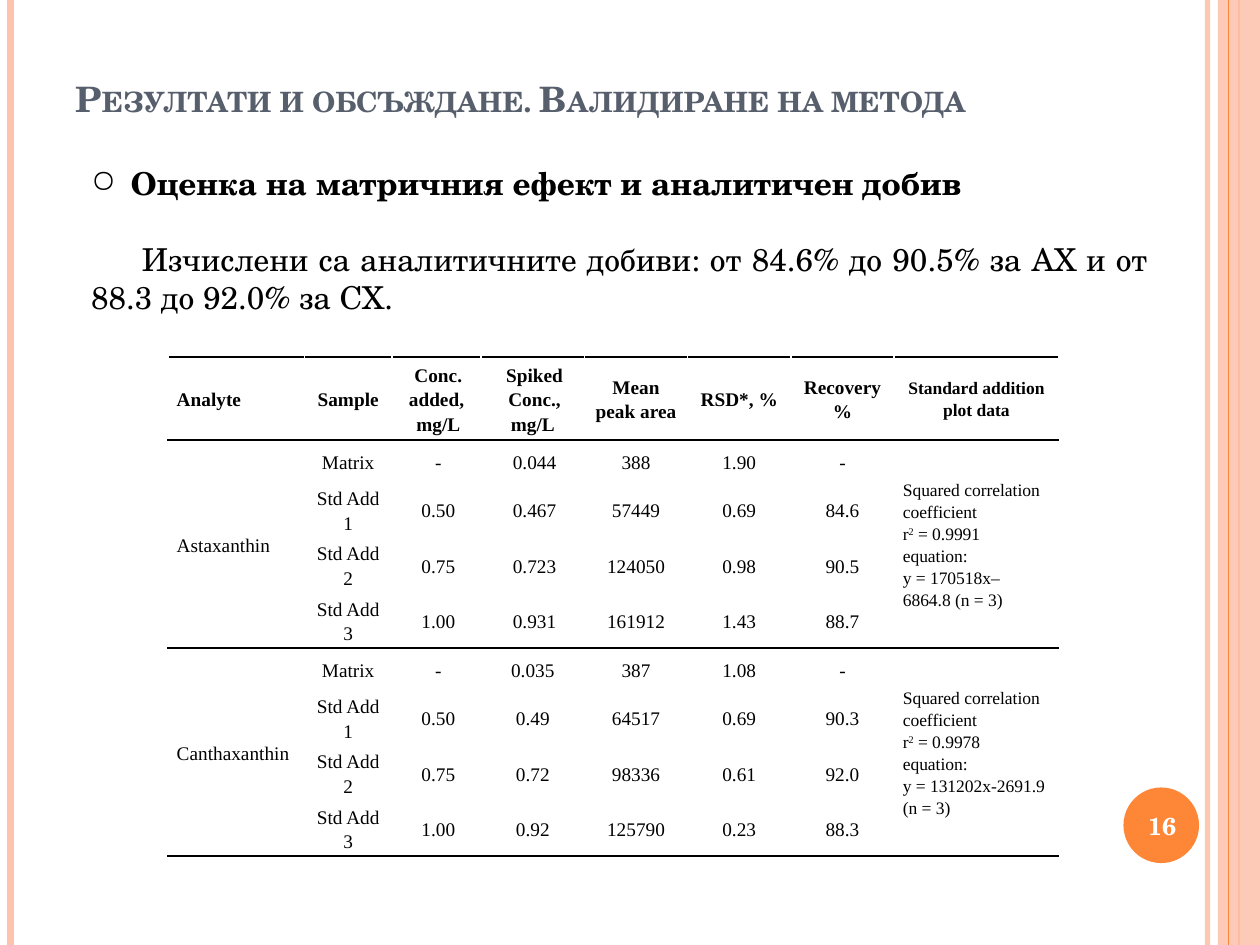
import pptx
import pptx.dml.color
import pptx.enum.shapes
import pptx.enum.text
import pptx.oxml
import pptx.oxml.ns
import pptx.util
from lxml import etree

Pt = pptx.util.Pt
ALIGN = pptx.enum.text.PP_ALIGN
ANCHOR = pptx.enum.text.MSO_ANCHOR
SHAPE = pptx.enum.shapes.MSO_SHAPE
qn = pptx.oxml.ns.qn

SERIF, TIMES = "TeX Gyre Schola", "Times New Roman"
ORANGE, PEACH, SLATE, BLACK, WHITE = "FE8637", "FEC3AE", "575F6D", "000000", "FFFFFF"
COLS = [78, 50, 51, 59, 59, 59, 59, 94]
HEADER = ["Analytе", "Sample", "Conc. added,\nmg/L", "Spiked\nConc., mg/L",
          "Mean peak area", "RSD*, %", "Recovery\n%", "Standard addition plot data"]
SAMPLES = ["Matrix", "Std Add 1", "Std Add 2", "Std Add 3"]
ADDED = ["-", "0.50", "0.75", "1.00"]
NOTE = "Squared correlation coefficient\nr^2^ = {}\nequation:\n{} (n = 3)"
ANALYTES = [
    ("Astaxanthin", NOTE.format("0.9991", "y = 170518x– 6864.8"),
     [("0.044", "388", "1.90", "-"), ("0.467", "57449", "0.69", "84.6"),
      ("0.723", "124050", "0.98", "90.5"), ("0.931", "161912", "1.43", "88.7")]),
    ("Canthaxanthin", NOTE.format("0.9978", "y = 131202x-2691.9"),
     [("0.035", "387", "1.08", "-"), ("0.49", "64517", "0.69", "90.3"),
      ("0.72", "98336", "0.61", "92.0"), ("0.92", "125790", "0.23", "88.3")]),
]


def rgb(color):
    """Return a colour from a hex string."""
    return pptx.dml.color.RGBColor.from_string(color)


def add_run(p, text, color=BLACK, **font):
    """Add a run with the given font values."""
    r = p.add_run()
    r.text = text
    r.font.color.rgb = rgb(color)
    for name, value in font.items():
        setattr(r.font, name, value)
    return r


def set_alpha(fill, percent):
    """Make the solid colour under an element partly transparent."""
    color = next(fill.iter(qn("a:srgbClr")))
    etree.SubElement(color, qn("a:alpha")).set("val", str(percent * 1000))


def add_box(s, x, y, w, h, anchor):
    """Add a wrapping text box and return its text frame."""
    tf = s.shapes.add_textbox(Pt(x), Pt(y), Pt(w), Pt(h)).text_frame
    tf.word_wrap, tf.vertical_anchor = True, anchor
    return tf


def add_rule(s, x, height, color, width, alpha=100):
    """Add a full-height vertical line."""
    line = s.shapes.add_connector(pptx.enum.shapes.MSO_CONNECTOR.STRAIGHT,
                                  Pt(x), 0, Pt(x), Pt(height))
    line.line.color.rgb = rgb(color)
    line.line.width = Pt(width)
    if alpha < 100:
        set_alpha(line.line._get_or_add_ln(), alpha)
    etree.SubElement(line._element.spPr, qn("a:effectLst"))


def add_plain(s, kind, x, y, w, h, color):
    """Add a filled shape without line or shadow."""
    sp = s.shapes.add_shape(kind, Pt(x), Pt(y), Pt(w), Pt(h))
    sp.shadow.inherit = False
    sp.fill.solid()
    sp.fill.fore_color.rgb = rgb(color)
    sp.line.fill.background()
    return sp


def add_frame(s, w, h):
    """Add the vertical stripes at both slide edges."""
    add_rule(s, w - 30, h, PEACH, 3, 93)
    add_rule(s, 6, h, PEACH, 4.5)
    add_rule(s, w - 12, h, ORANGE, 1.5)
    band = add_plain(s, SHAPE.RECTANGLE, w - 24, 0, 24, h, PEACH)
    set_alpha(band._element.spPr, 87)
    add_rule(s, w - 18, h, ORANGE, 0.75)


def add_title(s, x, y, w, h):
    """Add the small-caps slide title."""
    p = add_box(s, x, y, w, h, ANCHOR.BOTTOM).paragraphs[0]
    r = add_run(p, "Резултати и обсъждане. Валидиране на метода", SLATE,
                name=SERIF, size=Pt(20), bold=True)
    r._r.get_or_add_rPr().set("cap", "small")


def add_body(s, x, y, w, h):
    """Add the bulleted heading and the paragraph below it."""
    tf = add_box(s, x, y, w, h, ANCHOR.MIDDLE)
    head, text = tf.paragraphs[0], tf.add_paragraph()
    head.alignment = text.alignment = ALIGN.JUSTIFY
    font = {"name": SERIF, "size": Pt(18)}
    add_run(head, "Оценка на матричния ефект и аналитичен добив", bold=True, **font)
    add_run(text, "Изчислени са аналитичните добиви: от 84.6% до 90.5% за AX "
                  "и от 88.3 до 92.0% за CX.", **font)
    pPr = head._p.get_or_add_pPr()
    pPr.set("marL", str(Pt(22.5)))
    pPr.set("indent", str(-Pt(22.5)))
    etree.SubElement(pPr, qn("a:buChar")).set("char", "○")
    text.space_before = Pt(22)
    text._p.get_or_add_pPr().set("indent", str(Pt(29)))


def add_page_number(s, x, y, size):
    """Add the round page number badge."""
    add_plain(s, SHAPE.OVAL, x, y, size, size, ORANGE)
    p = add_box(s, x - 2, y + 1, size + 5, size - 2, ANCHOR.MIDDLE).paragraphs[0]
    p.alignment = ALIGN.CENTER
    add_run(p, "16", WHITE, name=SERIF, size=Pt(14), bold=True)


def set_borders(cell, sides):
    """Draw black one-point borders on the given sides of a cell."""
    tcPr = cell._tc.get_or_add_tcPr()
    for i, side in enumerate(sides):
        tcPr.insert(i, pptx.oxml.parse_xml(
            f'<a:ln{side} {pptx.oxml.ns.nsdecls("a")} w="{Pt(1)}"><a:solidFill>'
            f'<a:srgbClr val="{BLACK}"/></a:solidFill></a:ln{side}>'))


def fill_cell(cell, text, align, indent, **font):
    """Write lines into a cell, with text between carets as superscript."""
    for name, value in {"margin_left": Pt(5), "margin_right": Pt(5), "margin_top": 0,
                        "margin_bottom": 0, "vertical_anchor": ANCHOR.MIDDLE}.items():
        setattr(cell, name, value)
    tf = cell.text_frame
    for i, line in enumerate(text.split("\n")):
        p = tf.add_paragraph() if i else tf.paragraphs[0]
        p.alignment, p.line_spacing = align, 1.15
        if indent:
            p._p.get_or_add_pPr().set("indent", str(Pt(indent)))
        for j, part in enumerate(line.split("^")):
            r = add_run(p, part, name=TIMES, **font)
            if j % 2:
                r._r.get_or_add_rPr().set("baseline", "30000")


def add_results(s, x, y, w, h):
    """Add the recovery table, four sample rows for each analyte."""
    rows = [HEADER]
    for name, note, values in ANALYTES:
        for i, row in enumerate(values):
            rows.append([name if i == 0 else "", SAMPLES[i], ADDED[i], *row,
                         note if i == 0 else ""])
    last = len(COLS) - 1
    table = s.shapes.add_table(len(rows), len(COLS), Pt(x), Pt(y), Pt(w), Pt(h)).table
    table.first_row = table.horz_banding = False
    for column, width in zip(table.columns, COLS):
        column.width = Pt(width)
    for i, row in enumerate(rows):
        step = (i - 1) % 4
        table.rows[i].height = Pt(47.5 if i == 0 else 24 if step == 0 else 31.65)
        for j, text in enumerate(row):
            cell = table.cell(i, j)
            cell.fill.background()
            merged = i > 0 and j in (0, last)
            top = i == 0 or step == 0
            bottom = i == 0 or step == 3 or merged and step == 0
            set_borders(cell, "T" * top + "B" * bottom)
            if merged and step == 0:
                cell.merge(table.cell(i + 3, j))
            if text:
                left = j == 0 or merged
                fill_cell(cell, text, ALIGN.LEFT if left else ALIGN.CENTER,
                          2 if j == 2 or j == 3 and i < 5 else 0,
                          size=Pt(10 if j == last else 11), bold=i == 0)


def main():
    """Build the slide and save it."""
    prs = pptx.Presentation()
    prs.slide_width, prs.slide_height = Pt(720), Pt(540)
    s = prs.slides.add_slide(prs.slide_layouts[6])
    add_frame(s, 720, 540)
    add_title(s, 36, 6, 654, 66)
    add_body(s, 45, 90, 618, 94)
    add_page_number(s, 642, 450, 43.2)
    add_results(s, 96, 204, sum(COLS), 286)
    prs.save("out.pptx")


if __name__ == "__main__":
    main()
